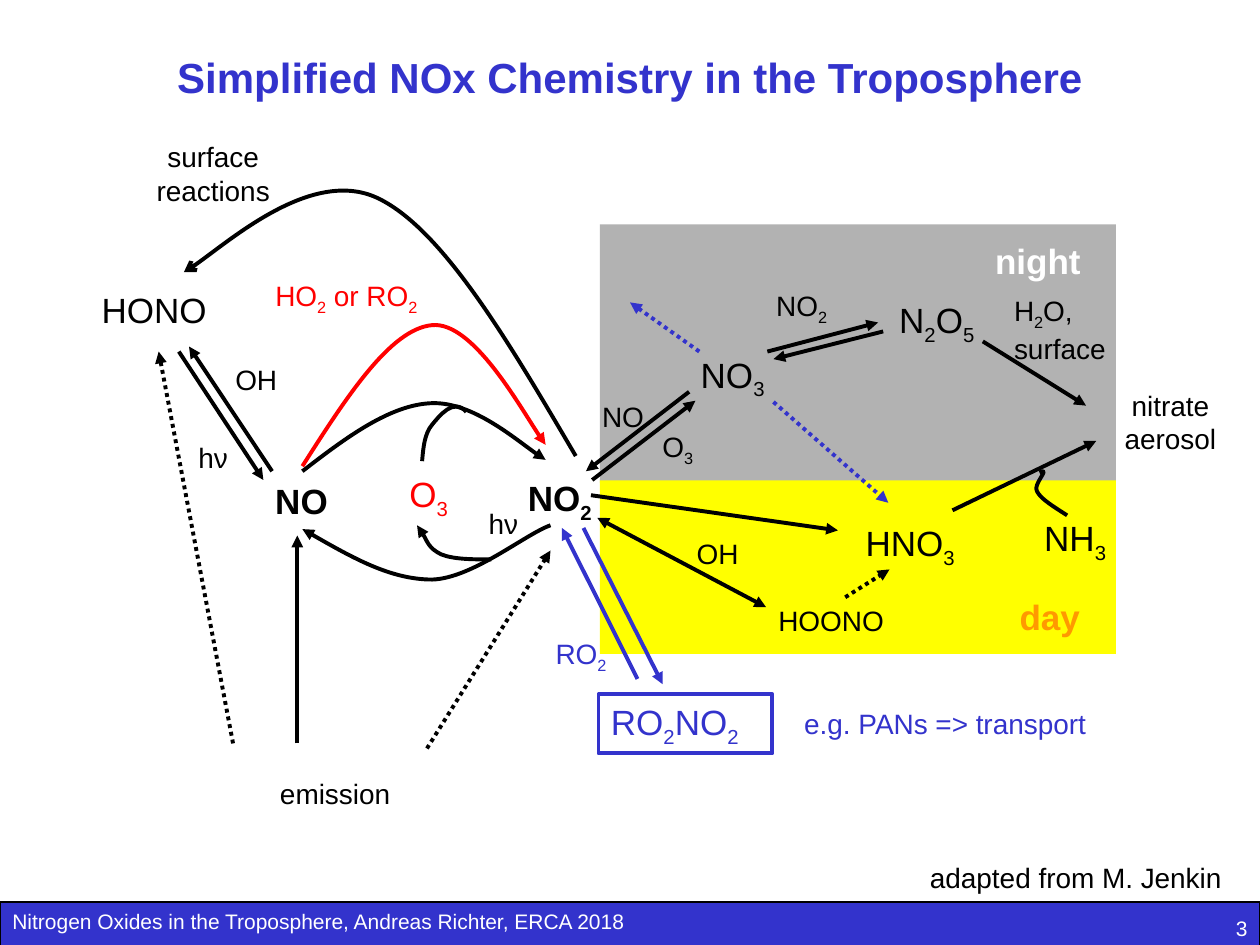
import itertools

import lxml.etree
import pptx
import pptx.dml.color
import pptx.enum.dml
import pptx.enum.shapes
import pptx.enum.text
import pptx.oxml.ns
import pptx.util

Pt = pptx.util.Pt
ALIGN = pptx.enum.text.PP_ALIGN
ANCHOR = pptx.enum.text.MSO_ANCHOR
AUTO_SIZE = pptx.enum.text.MSO_AUTO_SIZE
BLACK, WHITE, BLUE, RED = "000000", "FFFFFF", "3333CC", "FF0000"
GREY, YELLOW, ORANGE = "B2B2B2", "FFFF00", "FF9900"
LARGE, SMALL, FOOTER = 20, 16, 12


def color(hex_value):
    return pptx.dml.color.RGBColor.from_string(hex_value)


def add_element(parent, tag, **attributes):
    return lxml.etree.SubElement(parent, pptx.oxml.ns.qn(tag), attributes)


class Diagram:
    """Holds the style and the slide being drawn."""
    font_name = "Arial"
    line_width = 2.25

    def __init__(self, slide):
        self.slide = slide

    def set_text(self, shape, text, size, hex_value=BLACK, bold=False,
                 align=ALIGN.LEFT, anchor=ANCHOR.TOP, subscripts=True):
        frame = shape.text_frame
        settings = {"word_wrap": True, "auto_size": AUTO_SIZE.NONE,
                    "vertical_anchor": anchor}
        for name, value in settings.items():
            setattr(frame, name, value)
        paragraph = frame.paragraphs[0]
        paragraph.alignment = align
        for index, line in enumerate(text.split("\n")):
            if index:
                paragraph.add_line_break()
            # Digits in a formula are subscripts
            for is_digit, letters in itertools.groupby(line, str.isdigit):
                run = paragraph.add_run()
                run.text = "".join(letters)
                formats = {"name": self.font_name, "size": Pt(size), "bold": bold}
                for name, value in formats.items():
                    setattr(run.font, name, value)
                run.font.color.rgb = color(hex_value)
                if is_digit and subscripts:
                    run.font._element.set("baseline", "-25000")

    def title(self, text, left, top, width, height):
        shape = self.slide.shapes.title
        box = {"left": left, "top": top, "width": width, "height": height}
        for name, value in box.items():
            setattr(shape, name, Pt(value))
        self.set_text(shape, text, 24, BLUE, True, ALIGN.CENTER, ANCHOR.MIDDLE)

    def label(self, text, left, top, width, size=SMALL, hex_value=BLACK, lines=1, **style):
        height = size * 1.2 * lines + 7.2
        shape = self.slide.shapes.add_textbox(
            Pt(left), Pt(top), Pt(width), Pt(height))
        self.set_text(shape, text, size, hex_value, **style)

    def rectangle(self, left, top, width, height, fill=None, outline=None, weight=2.25):
        shape = self.slide.shapes.add_shape(
            pptx.enum.shapes.MSO_SHAPE.RECTANGLE,
            Pt(left), Pt(top), Pt(width), Pt(height))
        shape.shadow.inherit = False
        if fill:
            shape.fill.solid()
            shape.fill.fore_color.rgb = color(fill)
        else:
            shape.fill.background()
        if outline:
            shape.line.color.rgb = color(outline)
            shape.line.width = Pt(weight)
        else:
            shape.line.fill.background()
        return shape

    def stroke(self, shape, hex_value, dotted=False, head=None, tail=None):
        line = shape.line
        line.color.rgb = color(hex_value)
        line.width = Pt(self.line_width)
        if dotted:
            line.dash_style = pptx.enum.dml.MSO_LINE.ROUND_DOT
        properties = line._get_or_add_ln()
        for tag, arrow in (("a:headEnd", head), ("a:tailEnd", tail)):
            if arrow:
                add_element(properties, tag, type=arrow)

    def arrow(self, start, end, hex_value=BLACK, dotted=False, head=None):
        connector = self.slide.shapes.add_connector(
            pptx.enum.shapes.MSO_CONNECTOR.STRAIGHT, *map(Pt, start + end))
        self.stroke(connector, hex_value, dotted, head, "triangle")
        add_element(connector._element.spPr, "a:effectLst")

    def curve(self, points, hex_value=BLACK, tail="triangle"):
        """Cubic curve: a start point, then three points for each segment."""
        grid = [(round(x * 100), round(y * 100)) for x, y in points]
        builder = self.slide.shapes.build_freeform(*grid[0], scale=Pt(1) / 100)
        builder.add_line_segments(grid[1:], close=False)
        shape = builder.convert_to_shape()
        outline = shape._element.find(".//" + pptx.oxml.ns.qn("a:path"))
        corners = outline.findall(pptx.oxml.ns.qn("a:lnTo"))
        for index in range(0, len(corners), 3):
            bezier = add_element(outline, "a:cubicBezTo")
            for corner in corners[index:index + 3]:
                bezier.append(corner[0])
                outline.remove(corner)
        shape.shadow.inherit = False
        shape.fill.background()
        self.stroke(shape, hex_value, tail=tail)


def main():
    presentation = pptx.Presentation()
    presentation.slide_width, presentation.slide_height = Pt(720), Pt(540)
    slide = presentation.slides.add_slide(presentation.slide_layouts[5])
    diagram = Diagram(slide)

    # Title and footer
    diagram.title("Simplified NOx Chemistry in the Troposphere", 36, 21.6, 648, 44.6)
    footer = diagram.rectangle(0, 515.5, 720, 28.8, BLUE, BLACK, 0.75)
    diagram.set_text(footer, "Nitrogen Oxides in the Troposphere, Andreas Richter, ERCA 2018",
                     FOOTER, WHITE, subscripts=False)
    diagram.label("3", 570, 519.8, 150, FOOTER, WHITE, align=ALIGN.RIGHT, subscripts=False)

    # Night and day areas
    diagram.rectangle(342.75, 128.2, 295, 147.6, GREY)
    diagram.rectangle(342.75, 274.5, 295, 99.2, YELLOW)
    diagram.label("night", 561.5, 133.2, 70.5, LARGE, WHITE, bold=True)
    diagram.label("day", 575.5, 337, 57, LARGE, ORANGE, bold=True)

    # Species
    species = [
        ("HONO", 51, 161.5, 76, BLACK, False), ("NO", 150.2, 270.2, 47, BLACK, True),
        ("NO2", 294.5, 269, 65.5, BLACK, True), ("O3", 226.8, 266.4, 47, RED, False),
        ("NO3", 393.3, 198.2, 65.5, BLACK, False), ("N2O5", 506.7, 167.2, 65.5, BLACK, False),
        ("HNO3", 487.5, 294.5, 79, BLACK, False), ("NH3", 589.6, 291.6, 65.5, BLACK, False),
    ]
    for text, left, top, width, hex_value, bold in species:
        diagram.label(text, left, top, width, LARGE, hex_value, bold=bold)
    pan_box = diagram.rectangle(342, 396.7, 99.4, 33.8, outline=BLUE)
    diagram.set_text(pan_box, "RO2NO2", LARGE, BLUE)

    # Reaction partners and remarks
    remarks = [
        ("HO2 or RO2", 150.2, 155.5, 110, RED), ("NO", 337, 224.8, 47, BLACK),
        ("NO2", 436.5, 161.3, 47, BLACK), ("O3", 371.5, 242, 47, BLACK),
        ("hν", 272.2, 285.8, 47, BLACK), ("hν", 106.3, 248.4, 47, BLACK),
        ("OH", 391, 303, 47, BLACK), ("OH", 127.4, 203.8, 47, BLACK),
        ("HOONO", 437.7, 341.5, 75.5, BLACK), ("RO2", 310.4, 360, 49.5, BLUE),
        ("e.g. PANs => transport", 452.5, 400.3, 204.5, BLUE),
        ("adapted from M. Jenkin", 524.3, 488.3, 195.7, BLACK),
    ]
    for text, left, top, width, hex_value in remarks:
        diagram.label(text, left, top, width, SMALL, hex_value)
    diagram.label("H2O,\nsurface", 572.4, 164.2, 116, lines=2)
    for text, left, top, width, lines in [("nitrate aerosol", 632, 218.2, 73.5, 2),
                                          ("surface reactions", 79.3, 76.3, 85, 2),
                                          ("emission", 139, 440, 105, 1)]:
        diagram.label(text, left, top, width, lines=lines, align=ALIGN.CENTER)

    # Black reaction arrows
    reactions = [
        ((393.8, 223.9), (334.8, 269.3)), ((338.4, 274.3), (397.4, 229)),
        ((438.5, 200.9), (501.8, 184.3)), ((504.7, 189.4), (442, 205.2)),
        ((561.6, 195.1), (620.6, 231.8)), ((169.9, 424.8), (169.9, 306)),
        ((337.7, 283), (478.8, 303.1)), ((544.3, 291.6), (626.4, 252)),
        ((155.5, 269.3), (108, 198)), ((102.2, 200.9), (150.5, 274.3)),
    ]
    for start, end in reactions:
        diagram.arrow(start, end)
    diagram.arrow((341.3, 295.9), (437.8, 347), head="triangle")

    # Dotted arrows
    for start, end, hex_value in [((244, 427.7), (314.6, 314.6), BLACK),
                                  ((133.2, 424.8), (90.7, 200.9), BLACK),
                                  ((483, 341.3), (508.3, 325.4), BLACK),
                                  ((442, 229.7), (507.6, 287.3), BLUE),
                                  ((399.6, 200.9), (360, 172.8), BLUE)]:
        diagram.arrow(start, end, hex_value, dotted=True)

    # Exchange with the PAN reservoir
    diagram.arrow((333.4, 301.7), (378.7, 391), BLUE)
    diagram.arrow((364.3, 388), (321.1, 301.7), BLUE)

    # Curved reactions: NO to NO2, NO2 to NO, ozone, HONO, ammonia
    diagram.curve([(172.8, 266.4), (198, 226.8), (223.2, 187.9), (247, 185.8),
                   (270, 183.6), (303, 242.6), (311.8, 254.2)], RED)
    diagram.curve([(172.8, 269.3), (198, 249.8), (223.2, 231.1), (247, 230.4),
                   (270, 229.7), (303, 257.8), (311.8, 262.8)])
    diagram.curve([(314.6, 300.2), (300.2, 305.3), (270, 330.5), (247, 331.2),
                   (223.2, 331.2), (198, 316.8), (172.8, 302.4)])
    diagram.curve([(280.8, 319.7), (270, 319.7), (259.2, 319.7), (252, 316.8),
                   (244.8, 313.2), (241.2, 303.1), (238.3, 300.2)])
    diagram.curve([(241.2, 263.5), (241.9, 255.6), (242.6, 247.7), (247, 242.6),
                   (250.6, 238.3), (259.2, 226.8), (266.4, 235.4)], tail=None)
    diagram.curve([(329, 260.6), (290.9, 195.8), (252.7, 130.3), (215.3, 113),
                   (177.8, 95.8), (118.8, 148.3), (105.1, 155.5)], tail="arrow")
    diagram.curve([(609.8, 294.5), (601.9, 289.4), (594.7, 285.1), (592.6, 280.8),
                   (589.7, 277.2), (601.2, 266.4), (594, 270)], tail=None)

    presentation.save("out.pptx")


if __name__ == "__main__":
    main()
